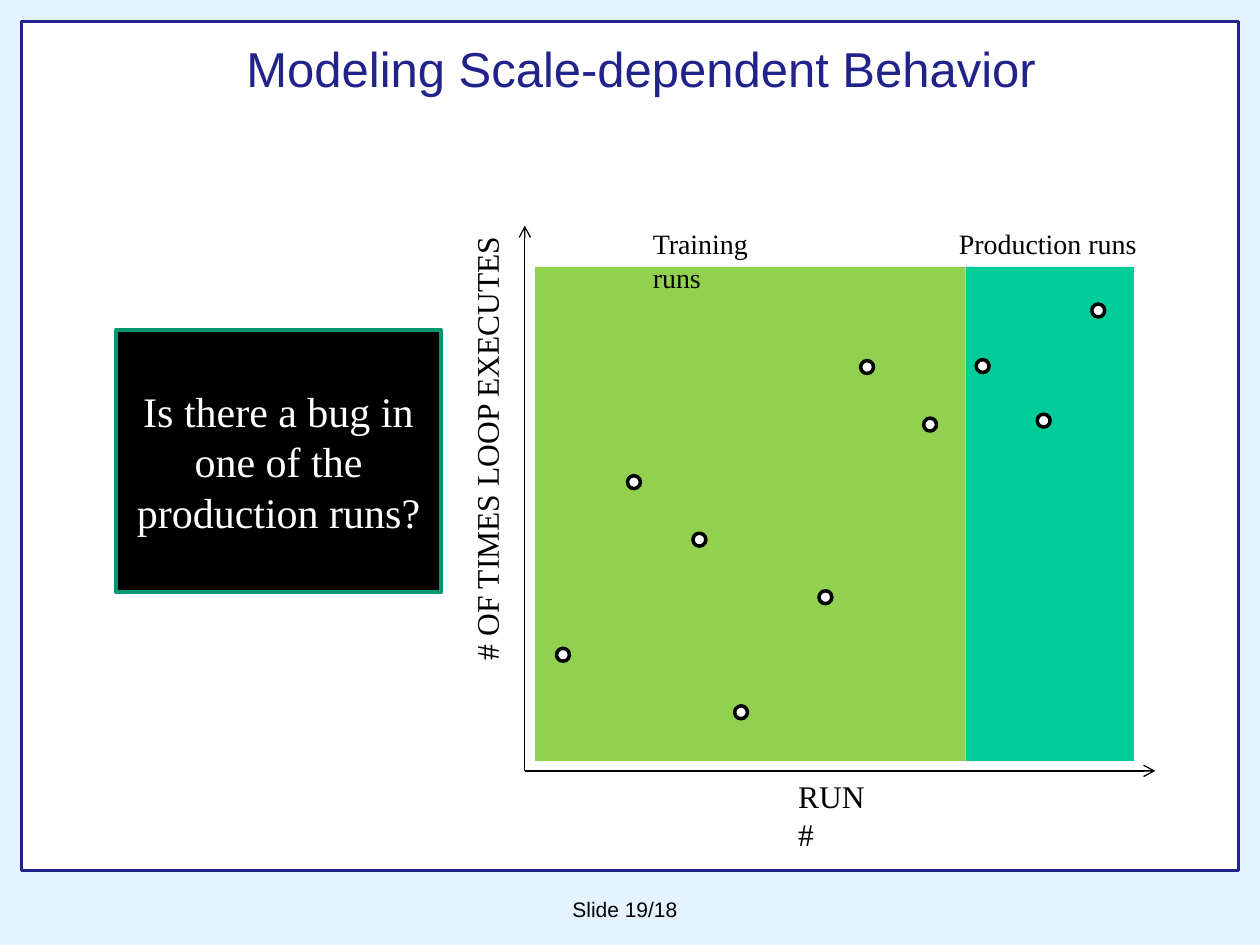
"""Build a slide that plots loop counts of training and production runs."""
from dataclasses import dataclass
from typing import Optional

from lxml.etree import SubElement
from pptx import Presentation
from pptx.dml.color import RGBColor as Rgb
from pptx.enum.shapes import MSO_CONNECTOR as Connector, MSO_SHAPE as Preset
from pptx.enum.text import MSO_ANCHOR as Anchor, PP_ALIGN as Align
from pptx.oxml.ns import qn
from pptx.util import Cm, Pt


@dataclass(frozen=True)
class Theme:
    """Colours, fonts, type sizes and line widths."""
    backdrop: str = "E4F3FF"
    navy: str = "22228B"
    black: str = "000000"
    white: str = "FFFFFF"
    training: str = "92D050"
    production: str = "00CC99"
    callout_edge: str = "009771"
    sans: str = "Arial"
    serif: str = "Times New Roman"
    title_size: float = 28
    callout_size: float = 24
    axis_size: float = 18
    region_size: float = 16
    footer_size: float = 12
    axis_width: float = 0.75
    frame_width: float = 1.5
    edge_width: float = 2


@dataclass(frozen=True)
class Box:
    """A place on the slide in centimetres."""
    left: float
    top: float
    width: float
    height: float

    def lengths(self) -> tuple:
        """Return left, top, width and height as lengths."""
        return tuple(map(Cm, (self.left, self.top, self.width, self.height)))


@dataclass(frozen=True)
class Panel:
    """A filled shape with an optional outline."""
    box: Box
    fill: str
    edge: Optional[str] = None
    edge_width: float = 0
    preset: Preset = Preset.RECTANGLE


@dataclass(frozen=True)
class Label:
    """A line of text in its own box."""
    text: str
    box: Box
    size: float
    font: str = Theme.serif
    wrap: bool = True
    direction: str = "horz"


THEME = Theme()
TITLE_BOX = Box(1.07, 0.64, 23.7, 1.47)
FRAME = Panel(Box(0.43, 0.43, 24.54, 17.12), THEME.white, THEME.navy, THEME.frame_width)
CALLOUT = Panel(Box(2.34, 6.65, 6.55, 5.29), THEME.black, THEME.callout_edge, THEME.edge_width)

ORIGIN_X, ORIGIN_Y = 10.58, 15.54
AXIS_TOP, AXIS_RIGHT = 4.55, 23.29
AXIS_ENDS = [(ORIGIN_X, AXIS_TOP), (AXIS_RIGHT, ORIGIN_Y)]

PLOT_LEFT, PLOT_SPLIT, PLOT_RIGHT = 10.79, 19.47, 22.86
PLOT_TOP, PLOT_HEIGHT = 5.38, 9.96
REGIONS = [
    Panel(Box(left, PLOT_TOP, right - left, PLOT_HEIGHT), fill)
    for left, right, fill in [
        (PLOT_SPLIT, PLOT_RIGHT, THEME.production),
        (PLOT_LEFT, PLOT_SPLIT, THEME.training),
    ]
]

MARKER_SIZE = 0.26
TRAINING_X = [14.94, 11.35, 16.64, 14.1, 12.78, 18.75, 17.48]
TRAINING_BOTTOM, TRAINING_STEP = 14.36, 1.16
TRAINING_RUNS = [(x, TRAINING_BOTTOM - row * TRAINING_STEP) for row, x in enumerate(TRAINING_X)]
PRODUCTION_RUNS = [(22.14, 6.26), (21.04, 8.48), (19.81, 7.38)]

REGION_LABEL_TOP, REGION_LABEL_HEIGHT = 4.45, 0.94
LABELS = [
    Label("Slide 19/18", Box(11.29, 17.95, 2.69, 0.76), THEME.footer_size,
          font=THEME.sans, wrap=False),
    Label("RUN #", Box(15.84, ORIGIN_Y, 2.16, 1.02), THEME.axis_size),
    Label("# OF TIMES LOOP EXECUTES", Box(9.3, 4.42, 1.27, 9.14), THEME.axis_size,
          direction="vert270"),
    Label("Training runs", Box(12.91, REGION_LABEL_TOP, 3.48, REGION_LABEL_HEIGHT),
          THEME.region_size),
    Label("Production runs", Box(19.08, REGION_LABEL_TOP, 4.22, REGION_LABEL_HEIGHT),
          THEME.region_size),
]


def write(frame, text: str, size: float, font: str, color: str, align: Align = Align.LEFT) -> None:
    """Fill a text frame with one formatted paragraph."""
    frame.text = text
    paragraph = frame.paragraphs[0]
    paragraph.alignment = align
    paragraph.font.size = Pt(size)
    paragraph.font.name = font
    paragraph.font.color.rgb = Rgb.from_string(color)


def paint(fill, color: str) -> None:
    """Give a fill one solid colour."""
    fill.solid()
    fill.fore_color.rgb = Rgb.from_string(color)


def draw_panel(shapes, panel: Panel):
    """Draw a panel and return its shape."""
    shape = shapes.add_shape(panel.preset, *panel.box.lengths())
    shape.shadow.inherit = False
    paint(shape.fill, panel.fill)
    if panel.edge:
        paint(shape.line.fill, panel.edge)
        shape.line.width = Pt(panel.edge_width)
    else:
        shape.line.fill.background()
    return shape


def draw_label(shapes, label: Label) -> None:
    """Draw a label in its reading direction."""
    textbox = shapes.add_textbox(*label.box.lengths())
    textbox.text_frame.word_wrap = label.wrap
    write(textbox.text_frame, label.text, label.size, label.font, THEME.black)
    textbox.element.txBody.find(qn("a:bodyPr")).set("vert", label.direction)


def draw_axis(shapes, end: tuple) -> None:
    """Draw an arrow from the origin of the plot."""
    axis = shapes.add_connector(Connector.STRAIGHT, *map(Cm, (ORIGIN_X, ORIGIN_Y, *end)))
    paint(axis.line.fill, THEME.black)
    axis.line.width = Pt(THEME.axis_width)
    properties = axis.element.spPr
    SubElement(properties.find(qn("a:ln")), qn("a:tailEnd"), type="arrow")
    SubElement(properties, qn("a:effectLst"))


def draw_run(shapes, center: tuple) -> None:
    """Draw one run as a ring around its centre."""
    left, top = (value - MARKER_SIZE / 2 for value in center)
    ring = Box(left, top, MARKER_SIZE, MARKER_SIZE)
    draw_panel(shapes, Panel(ring, THEME.white, THEME.black, THEME.edge_width, Preset.OVAL))


def draw_callout(shapes) -> None:
    """Draw the question beside the plot."""
    question = draw_panel(shapes, CALLOUT).text_frame
    question.word_wrap = True
    question.vertical_anchor = Anchor.MIDDLE
    write(question, "Is there a bug in one of the production runs?", THEME.callout_size,
          THEME.serif, THEME.white, Align.CENTER)


def place_title(shapes) -> None:
    """Move, format and raise the title above the frame."""
    title = shapes.title
    title.left, title.top, title.width, title.height = TITLE_BOX.lengths()
    title.text_frame.vertical_anchor = Anchor.MIDDLE
    write(title.text_frame, "Modeling Scale-dependent Behavior", THEME.title_size,
          THEME.sans, THEME.navy, Align.CENTER)
    title.element.getparent().append(title.element)


def main() -> None:
    """Assemble and save the slide."""
    deck = Presentation()
    deck.slide_width, deck.slide_height = Cm(25.4), Cm(19.05)
    title_only = deck.slide_layouts.get_by_name("Title Only")
    slide = deck.slides.add_slide(title_only)
    paint(slide.background.fill, THEME.backdrop)
    shapes = slide.shapes
    for panel in [FRAME, *REGIONS]:
        draw_panel(shapes, panel)
    place_title(shapes)
    for end in AXIS_ENDS:
        draw_axis(shapes, end)
    for center in TRAINING_RUNS + PRODUCTION_RUNS:
        draw_run(shapes, center)
    draw_callout(shapes)
    for label in LABELS:
        draw_label(shapes, label)
    deck.save("out.pptx")


if __name__ == "__main__":
    main()
